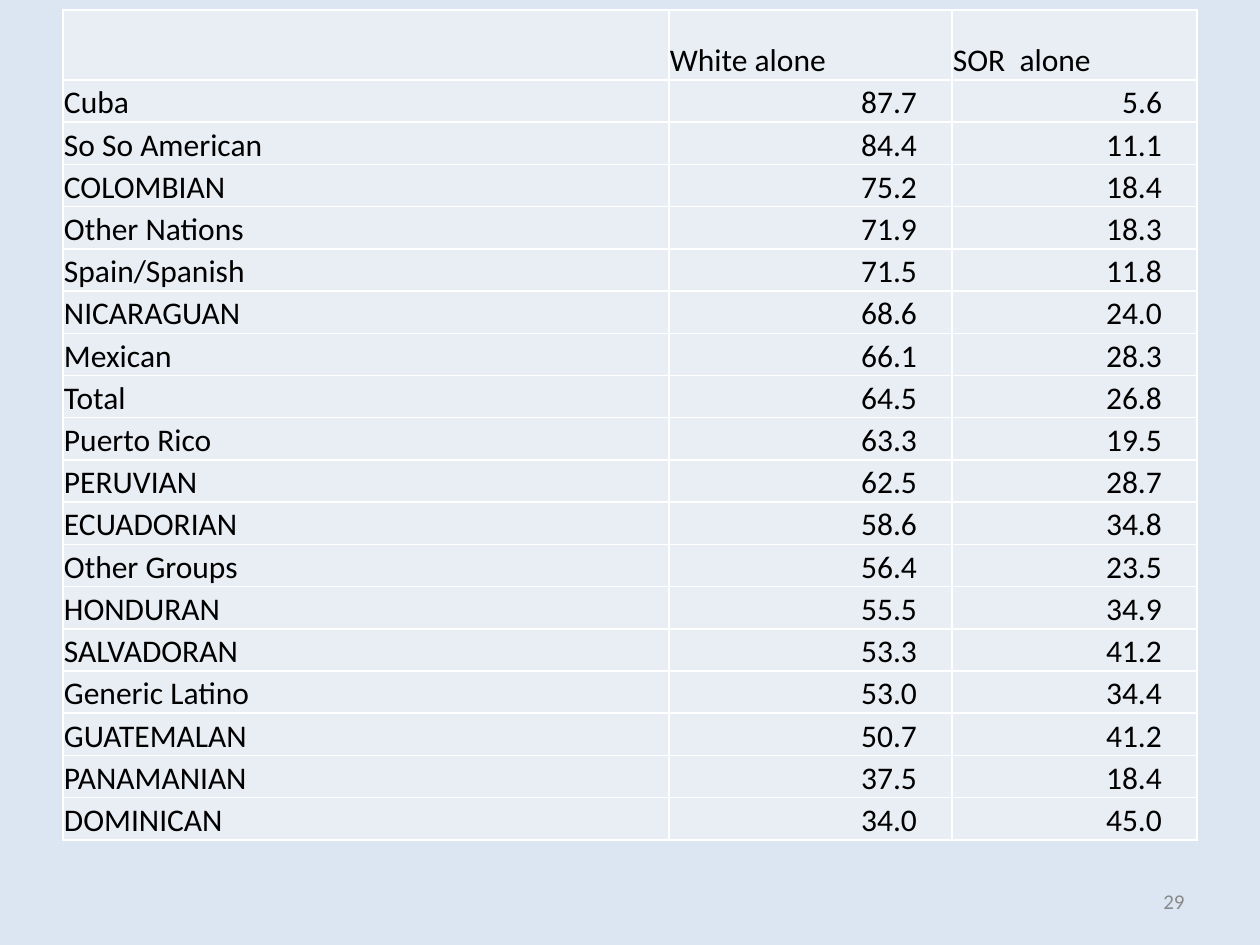
from lxml import etree
from pptx import Presentation
from pptx.dml.color import RGBColor
from pptx.enum.text import MSO_ANCHOR, PP_ALIGN
from pptx.oxml.ns import qn
from pptx.util import Pt

BOTTOM, MIDDLE = MSO_ANCHOR.BOTTOM, MSO_ANCHOR.MIDDLE
LEFT, RIGHT = PP_ALIGN.LEFT, PP_ALIGN.RIGHT
COLORS = {
    "background": "DCE6F2",
    "cell": "E9EDF4",
    "border": "FFFFFF",
    "text": "000000",
    "number": "898989",
}
FONT = "Calibri"
SCALE = 914400 / 126


def px(length):
    return round(length * SCALE)


def write(frame, text, size, color, align):
    frame.text = text
    para = frame.paragraphs[0]
    para.alignment = align
    para.font.size = Pt(size)
    for span in para.runs:
        span.font.name = FONT
        span.font.size = Pt(size)
        span.font.color.rgb = RGBColor.from_string(COLORS[color])


rows = [
    ("", "White alone", "SOR  alone"),
    ("Cuba", "87.7", "5.6"),
    ("So So American", "84.4", "11.1"),
    ("COLOMBIAN", "75.2", "18.4"),
    ("Other Nations", "71.9", "18.3"),
    ("Spain/Spanish", "71.5", "11.8"),
    ("NICARAGUAN", "68.6", "24.0"),
    ("Mexican", "66.1", "28.3"),
    ("Total", "64.5", "26.8"),
    ("Puerto Rico", "63.3", "19.5"),
    ("PERUVIAN", "62.5", "28.7"),
    ("ECUADORIAN", "58.6", "34.8"),
    ("Other Groups", "56.4", "23.5"),
    ("HONDURAN", "55.5", "34.9"),
    ("SALVADORAN", "53.3", "41.2"),
    ("Generic Latino", "53.0", "34.4"),
    ("GUATEMALAN", "50.7", "41.2"),
    ("PANAMANIAN", "37.5", "18.4"),
    ("DOMINICAN", "34.0", "45.0"),
]
column_widths = [606, 283, 245]
header_height, body_height = 70, 760

deck = Presentation()
deck.slide_width, deck.slide_height = px(1260), px(945)
page = deck.slides.add_slide(deck.slide_layouts[6])
page.background.fill.solid()
page.background.fill.fore_color.rgb = RGBColor.from_string(COLORS["background"])

table = page.shapes.add_table(
    len(rows), len(column_widths), px(63), px(10),
    px(sum(column_widths)), px(header_height + body_height),
).table
table.horz_banding = False
table.first_row = False
for column, width in zip(table.columns, column_widths):
    column.width = px(width)
for index, row in enumerate(table.rows):
    row.height = px(body_height / (len(rows) - 1) if index else header_height)

for row_index, values in enumerate(rows):
    for column_index, value in enumerate(values):
        cell = table.cell(row_index, column_index)
        is_number = row_index > 0 and column_index > 0
        cell.vertical_anchor = BOTTOM
        cell.margin_left = cell.margin_top = px(1)
        cell.margin_right = px(35 if is_number else 1)
        cell.margin_bottom = 0
        write(cell.text_frame, value, 18, "text", RIGHT if is_number else LEFT)
        properties = cell._tc.get_or_add_tcPr()
        for side in ("a:lnL", "a:lnR", "a:lnT", "a:lnB"):
            line = etree.SubElement(properties, qn(side), w=str(Pt(1)))
            fill = etree.SubElement(line, qn("a:solidFill"))
            etree.SubElement(fill, qn("a:srgbClr"), val=COLORS["border"])
        cell.fill.solid()
        cell.fill.fore_color.rgb = RGBColor.from_string(COLORS["cell"])

number_box = page.shapes.add_textbox(px(903), px(876), px(294), px(50))
number_box.text_frame.word_wrap = True
number_box.text_frame.vertical_anchor = MIDDLE
write(number_box.text_frame, "29", 12, "number", RIGHT)

deck.save("out.pptx")
